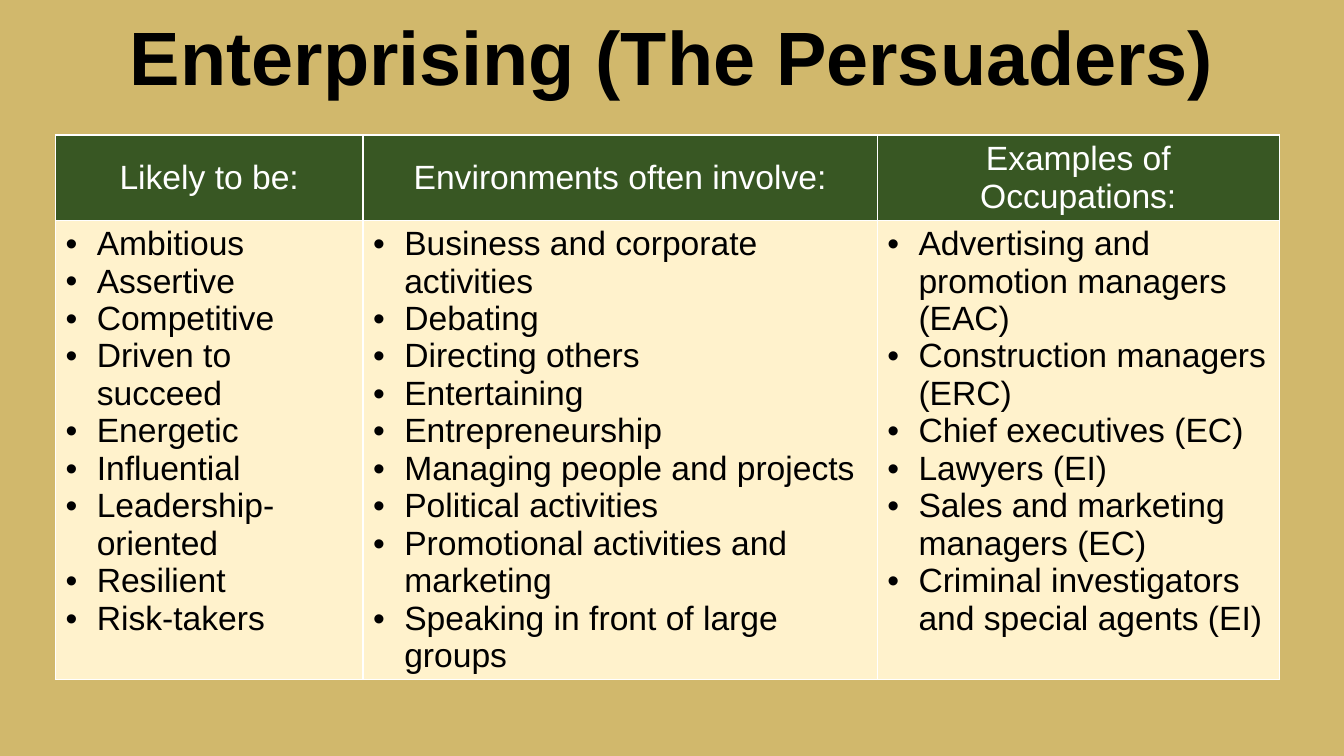
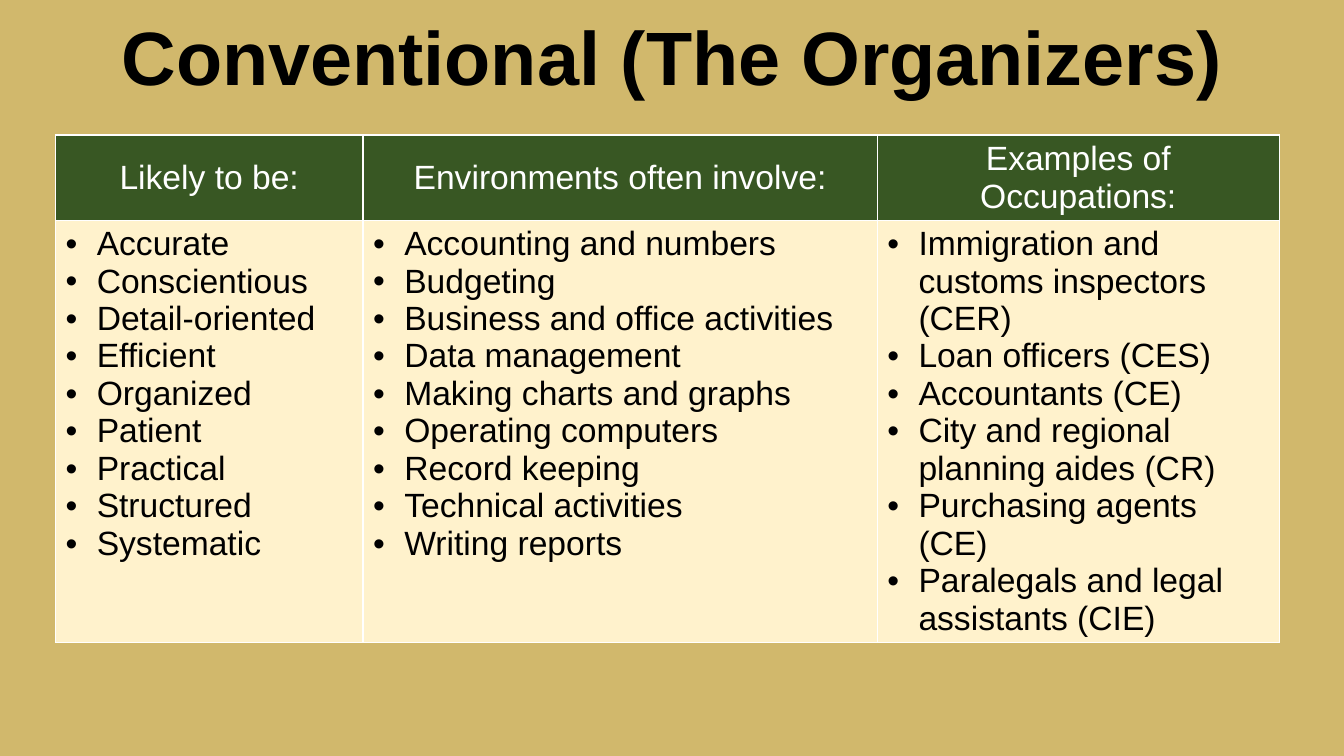
from lxml import etree
from pptx import Presentation
from pptx.dml.color import RGBColor
from pptx.enum.text import MSO_ANCHOR, MSO_AUTO_SIZE, PP_ALIGN
from pptx.oxml.ns import qn
from pptx.util import Inches, Pt

CENTER, LEFT = PP_ALIGN.CENTER, PP_ALIGN.LEFT
TOP, MIDDLE, BOTTOM = MSO_ANCHOR.TOP, MSO_ANCHOR.MIDDLE, MSO_ANCHOR.BOTTOM
NO_AUTOFIT = MSO_AUTO_SIZE.NONE

SAND = RGBColor(0xD1, 0xB8, 0x6C)
GREEN = RGBColor(0x38, 0x57, 0x23)
CREAM = RGBColor(0xFF, 0xF2, 0xCC)
BLACK = RGBColor(0, 0, 0)
WHITE = RGBColor(0xFF, 0xFF, 0xFF)

FONT = "Arial"
TITLE_SIZE, TABLE_SIZE = 54, 24
TITLE_ONLY = 5
WIDTH, HEIGHT = 13.33, 7.5
TITLE_TOP, TITLE_HEIGHT = 0.17, 0.89
TABLE_LEFT, TABLE_TOP = 0.55, 1.34
COLUMN_WIDTHS = (3.05, 5.1, 3.99)
HEADER_HEIGHT = 0.84
LINE_HEIGHT, CELL_PADDING = 0.37, 0.1
BULLET_INDENT = 0.31
HEADINGS = ("Likely to be:", "Environments often involve:", "Examples of Occupations:")

# Title, number of text lines in the tallest column, and the three columns
PERSONALITIES = (
    ("Enterprising (The Persuaders)", 12, (
        ("Ambitious", "Assertive", "Competitive", "Driven to succeed", "Energetic",
         "Influential", "Leadership-oriented", "Resilient", "Risk-takers"),
        ("Business and corporate activities", "Debating", "Directing others",
         "Entertaining", "Entrepreneurship", "Managing people and projects",
         "Political activities", "Promotional activities and marketing",
         "Speaking in front of large groups"),
        ("Advertising and promotion managers (EAC)", "Construction managers (ERC)",
         "Chief executives (EC)", "Lawyers (EI)", "Sales and marketing managers (EC)",
         "Criminal investigators and special agents (EI)"),
    )),
    ("Conventional (The Organizers)", 11, (
        ("Accurate", "Conscientious", "Detail-oriented", "Efficient", "Organized",
         "Patient", "Practical", "Structured", "Systematic"),
        ("Accounting and numbers", "Budgeting", "Business and office activities",
         "Data management", "Making charts and graphs", "Operating computers",
         "Record keeping", "Technical activities", "Writing reports"),
        ("Immigration and customs inspectors (CER)", "Loan officers (CES)",
         "Accountants (CE)", "City and regional planning aides (CR)",
         "Purchasing agents (CE)", "Paralegals and legal assistants (CIE)"),
    )),
)


class PersonalityDeck:
    def __init__(self):
        self.deck = Presentation()
        self.deck.slide_width = Inches(WIDTH)
        self.deck.slide_height = Inches(HEIGHT)
        background = self.deck.slide_master.background.fill
        background.solid()
        background.fore_color.rgb = SAND
        self.slide = None

    def add_slide(self):
        self.slide = self.deck.slides.add_slide(self.deck.slide_layouts[TITLE_ONLY])

    def add_text(self, para, text, size, color, align, bold=False):
        para.alignment = align
        span = para.add_run()
        span.text = text
        font = span.font
        font.name, font.size, font.bold = FONT, Pt(size), bold
        font.color.rgb = color

    def title(self, text):
        box = self.slide.shapes.title
        box.left, box.top = 0, Inches(TITLE_TOP)
        box.width, box.height = self.deck.slide_width, Inches(TITLE_HEIGHT)
        frame = box.text_frame
        frame.auto_size, frame.vertical_anchor = NO_AUTOFIT, BOTTOM
        para = frame.paragraphs[0]
        para.line_spacing = 0.9
        self.add_text(para, text, TITLE_SIZE, BLACK, CENTER, bold=True)

    def bullet(self, para):
        properties = para._p.get_or_add_pPr()
        properties.set("marL", str(Inches(BULLET_INDENT)))
        properties.set("indent", str(-Inches(BULLET_INDENT)))
        etree.SubElement(properties, qn("a:buFont"), typeface=FONT)
        etree.SubElement(properties, qn("a:buChar"), char="•")

    def borders(self, cell):
        properties = cell._tc.get_or_add_tcPr()
        for side in ("lnL", "lnR", "lnT", "lnB"):
            line = etree.SubElement(properties, qn(f"a:{side}"), w=str(Pt(1)))
            fill = etree.SubElement(line, qn("a:solidFill"))
            etree.SubElement(fill, qn("a:srgbClr"), val=str(WHITE))

    def cell(self, cell, lines, fill, color, align, anchor, bulleted=False):
        self.borders(cell)
        cell.fill.solid()
        cell.fill.fore_color.rgb = fill
        cell.vertical_anchor = anchor
        frame = cell.text_frame
        for index, text in enumerate(lines):
            para = frame.add_paragraph() if index else frame.paragraphs[0]
            if bulleted:
                self.bullet(para)
            self.add_text(para, text, TABLE_SIZE, color, align)

    def table(self, headings, lists, line_count):
        heights = (HEADER_HEIGHT, line_count * LINE_HEIGHT + CELL_PADDING)
        table = self.slide.shapes.add_table(
            len(heights), len(headings), Inches(TABLE_LEFT), Inches(TABLE_TOP),
            Inches(sum(COLUMN_WIDTHS)), Inches(sum(heights))).table
        table.first_row = table.horz_banding = False
        for row, height in zip(table.rows, heights):
            row.height = Inches(height)
        for index, (heading, items) in enumerate(zip(headings, lists)):
            table.columns[index].width = Inches(COLUMN_WIDTHS[index])
            self.cell(table.cell(0, index), [heading], GREEN, WHITE, CENTER, MIDDLE)
            self.cell(table.cell(1, index), items, CREAM, BLACK, LEFT, TOP, bulleted=True)


def main():
    pages = PersonalityDeck()
    for title, line_count, lists in PERSONALITIES:
        pages.add_slide()
        pages.title(title)
        pages.table(HEADINGS, lists, line_count)
    pages.deck.save("out.pptx")


if __name__ == "__main__":
    main()
